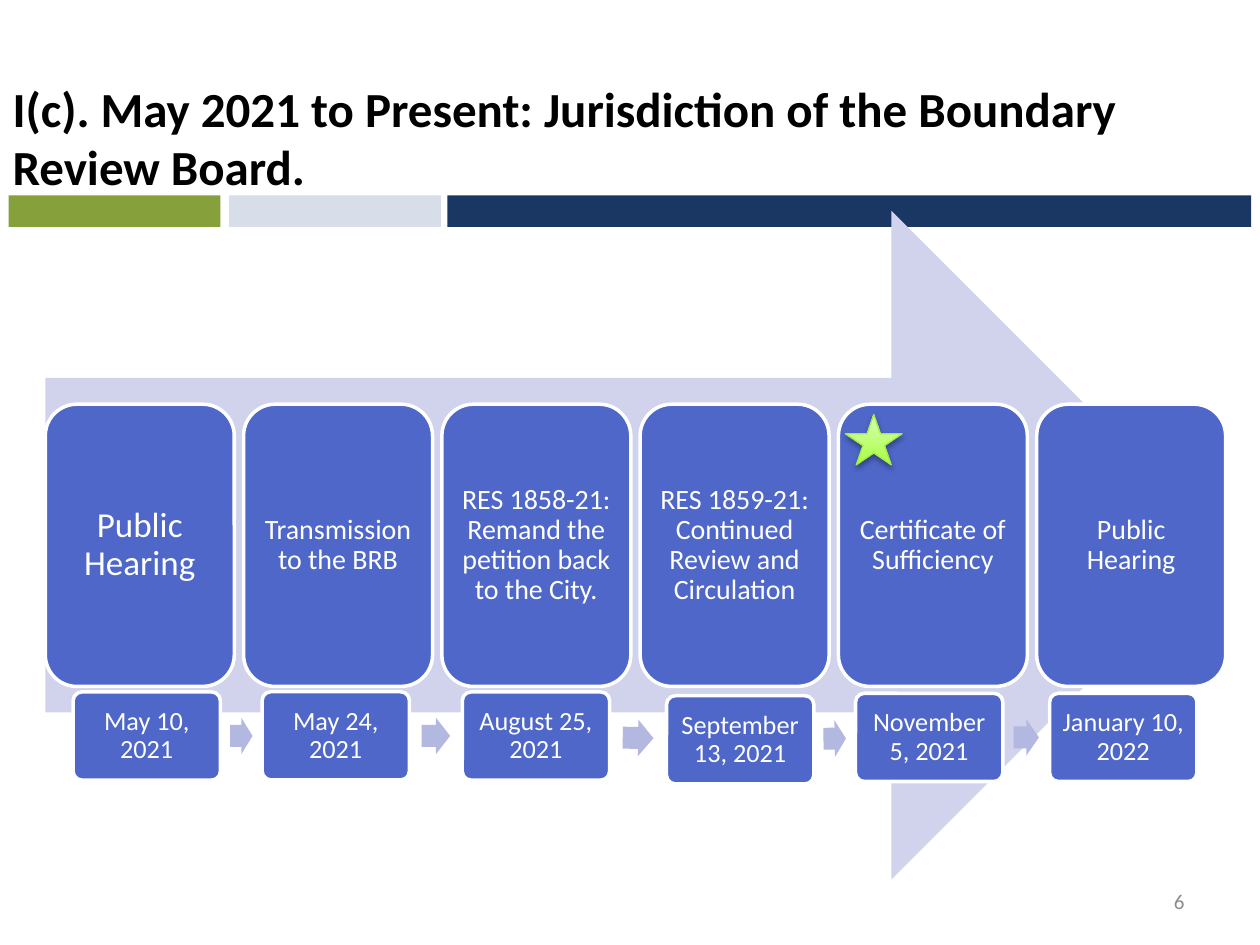
"""Build the timeline slide on the Boundary Review Board's jurisdiction."""
import math

import pptx
import pptx.dml.color
import pptx.enum.shapes
import pptx.enum.text
import pptx.oxml
import pptx.oxml.ns
import pptx.util

Pt = pptx.util.Pt
RGBColor = pptx.dml.color.RGBColor
SHAPE = pptx.enum.shapes.MSO_SHAPE
ALIGN = pptx.enum.text.PP_ALIGN
ANCHOR = pptx.enum.text.MSO_ANCHOR

BLACK = RGBColor(0x00, 0x00, 0x00)
WHITE = RGBColor(0xFF, 0xFF, 0xFF)
GRAY = RGBColor(0x8C, 0x8C, 0x8C)
NAVY = RGBColor(0x1A, 0x36, 0x62)
OLIVE = RGBColor(0x86, 0xA1, 0x3C)
PALE = RGBColor(0xD7, 0xDE, 0xEA)
BLUE = RGBColor(0x4E, 0x67, 0xC8)
LAVENDER = RGBColor(0xD0, 0xD3, 0xEB)
PERIWINKLE = RGBColor(0xB2, 0xB8, 0xE0)
LIME = RGBColor(0xA9, 0xFF, 0x3D)
LIGHT_LIME = RGBColor(0xD8, 0xFF, 0xB8)
LIME_EDGE = RGBColor(0xA4, 0xE9, 0x4C)

prs = pptx.Presentation()
prs.slide_width, prs.slide_height = Pt(720), Pt(540)
s = prs.slides.add_slide(prs.slide_layouts[5])


def add_shape(kind, left, top, width, height, color):
    sp = s.shapes.add_shape(kind, Pt(left), Pt(top), Pt(width), Pt(height))
    sp.shadow.inherit = False
    sp.fill.solid()
    sp.fill.fore_color.rgb = color
    sp.line.fill.background()
    return sp


def add_box(left, top, width, height, text, size):
    sp = add_shape(SHAPE.ROUNDED_RECTANGLE, left, top, width, height, BLUE)
    sp.line.color.rgb = WHITE
    sp.line.width = Pt(2)
    tf = sp.text_frame
    tf.word_wrap = True
    tf.vertical_anchor = ANCHOR.MIDDLE
    tf.margin_left = tf.margin_right = tf.margin_top = tf.margin_bottom = Pt(0.3 * size)
    p = tf.paragraphs[0]
    p.alignment = ALIGN.CENTER
    p.line_spacing = 0.9
    p.space_after = Pt(0.35 * size)
    r = p.add_run()
    r.text = text
    r.font.name, r.font.size = "Calibri", Pt(size)
    r.font.color.rgb = WHITE
    return sp


for left, width, color in [(255.6, 459.4, NAVY), (5, 121, OLIVE), (131, 121, PALE)]:
    add_shape(SHAPE.RECTANGLE, left, 111.6, width, 18, color)

title = s.shapes.title
title.left, title.top, title.width, title.height = Pt(0), Pt(41), Pt(720), Pt(75)
tf = title.text_frame
tf.word_wrap = True
tf.auto_size = pptx.enum.text.MSO_AUTO_SIZE.NONE
tf.vertical_anchor = ANCHOR.TOP
p = tf.paragraphs[0]
p.alignment = ALIGN.LEFT
r = p.add_run()
r.text = "I(c). May 2021 to Present: Jurisdiction of the Boundary Review Board."
r.font.name, r.font.size, r.font.bold = "Calibri", Pt(28), True
r.font.color.rgb = BLACK

number = s.shapes.add_textbox(Pt(516), Pt(500.5), Pt(168), Pt(28.8))
tf = number.text_frame
tf.word_wrap = True
tf.vertical_anchor = ANCHOR.MIDDLE
p = tf.paragraphs[0]
p.alignment = ALIGN.RIGHT
r = p.add_run()
r.text = "6"
r.font.name, r.font.size = "Calibri", Pt(12)
r.font.color.rgb = GRAY

add_shape(SHAPE.RIGHT_ARROW, 25.9, 120.4, 674.6, 382.3, LAVENDER)

steps = [
    ("Public Hearing", 20),
    ("Transmission to the BRB", 16),
    ("RES 1858-21: Remand the petition back to the City.", 16),
    ("RES 1859-21: Continued Review and Circulation", 16),
    ("Certificate of Sufficiency", 16),
    ("Public Hearing", 16),
]
for i, (text, size) in enumerate(steps):
    add_box(25.9 + i * 113.3, 231, 108, 161.3, text, size)

DATE_W, DATE_H, ARROW_H = 84.2, 50.4, 20.9
dates = [
    ("May 10, 2021", 41.8, 395.4),
    ("May 24, 2021", 149.8, 395.3),
    ("August 25, 2021", 264.2, 395.4),
    ("September 13, 2021", 380.9, 397.6),
    ("November 5, 2021", 488.9, 396.2),
    ("January 10, 2022", 599.8, 396.2),
]
for i, (text, left, top) in enumerate(dates):
    if i:
        _, last_left, last_top = dates[i - 1]
        gap = left - last_left - DATE_W
        arrow_w = 0.54 * gap
        mid_y = (top + last_top + DATE_H) / 2
        sp = add_shape(SHAPE.RIGHT_ARROW, left - (gap + arrow_w) / 2,
                       mid_y - ARROW_H / 2, arrow_w, ARROW_H, PERIWINKLE)
        sp.adjustments[0] = 0.6
        sp.rotation = math.degrees(math.atan2(top - last_top, left - last_left))
    sp = add_box(left, top, DATE_W, DATE_H, text, 15)
    sp.adjustments[0] = 0.1

star = add_shape(SHAPE.STAR_5_POINT, 483.1, 236.9, 32.4, 28.8, LIME)
star.fill.gradient()
star.fill.gradient_angle = 90
for stop, color in zip(star.fill.gradient_stops, (LIME, LIGHT_LIME)):
    stop.color.rgb = color
star.line.color.rgb = LIME_EDGE
star.line.width = Pt(0.75)
effects = star.element.spPr.find(pptx.oxml.ns.qn("a:effectLst"))
effects.append(pptx.oxml.parse_xml(
    f'<a:outerShdw {pptx.oxml.ns.nsdecls("a")} blurRad="{Pt(3.1)}" dist="{Pt(1.8)}"'
    ' dir="5400000" rotWithShape="0"><a:srgbClr val="000000">'
    '<a:alpha val="35000"/></a:srgbClr></a:outerShdw>'))

prs.save("out.pptx")
